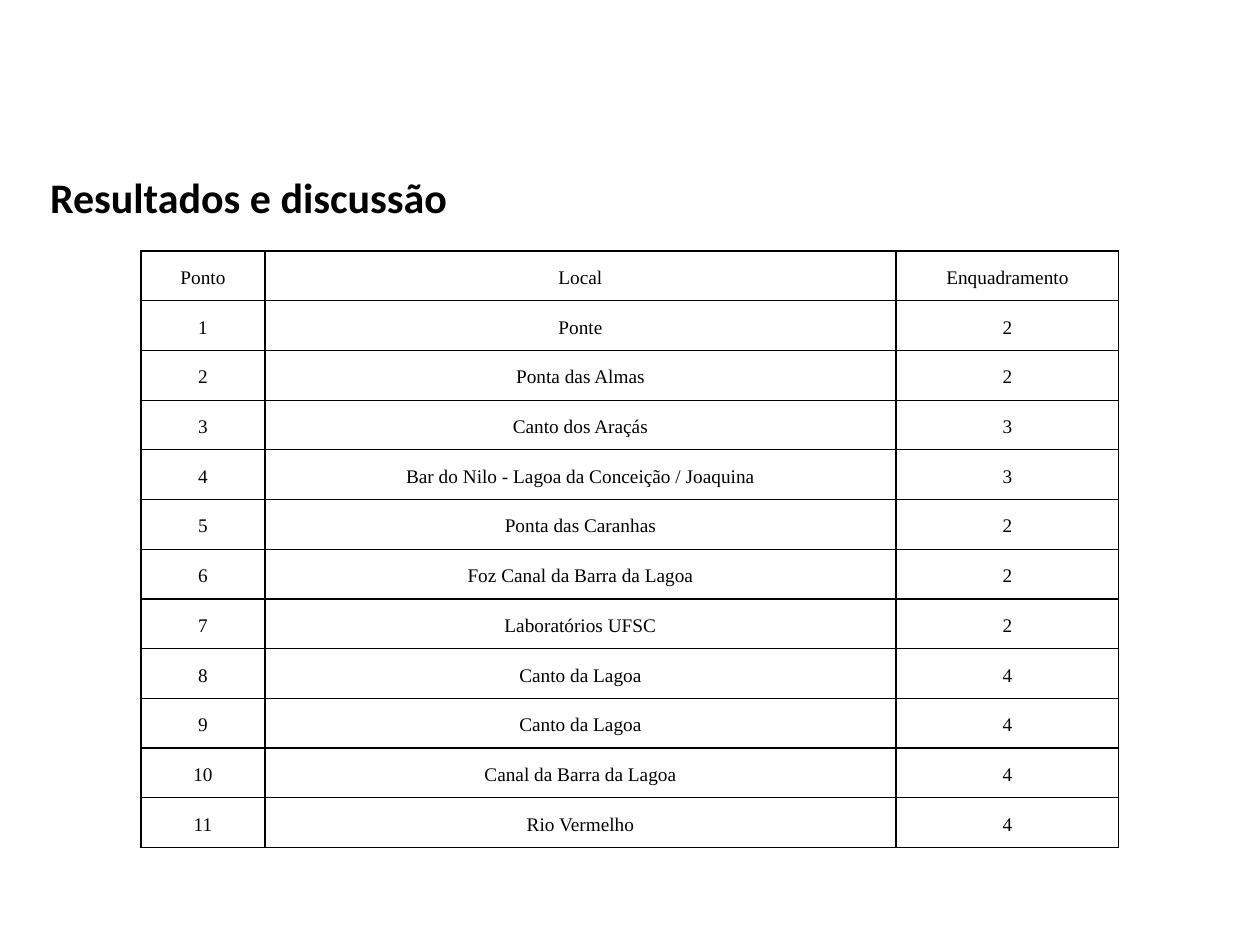
"""Build the results slide: a heading above a table of sampling points."""
from dataclasses import dataclass

from lxml import etree
from pptx import Presentation, util as u
from pptx.dml.color import RGBColor
from pptx.enum import text as t
from pptx.oxml import ns

SCALE = 914400 / 126


@dataclass(frozen=True)
class Theme:
    ink: str = "000000"
    paper: str = "FFFFFF"
    head_font: str = "Calibri"
    body_font: str = "Times New Roman"
    head_size: int = 24
    body_size: int = 11
    border: float = 0.75


@dataclass(frozen=True)
class Box:
    left: int
    top: int
    width: int
    height: int

    def emu(self) -> list[int]:
        return [px(n) for n in (self.left, self.top, self.width, self.height)]


@dataclass(frozen=True)
class Site:
    point: str
    place: str
    grade: str

    def cells(self) -> tuple[str, str, str]:
        return self.point, self.place, self.grade


THEME = Theme()
PLACES = (
    ("Ponte", 2),
    ("Ponta das Almas", 2),
    ("Canto dos Araçás", 3),
    ("Bar do Nilo - Lagoa da Conceição / Joaquina", 3),
    ("Ponta das Caranhas", 2),
    ("Foz Canal da Barra da Lagoa", 2),
    ("Laboratórios UFSC", 2),
    ("Canto da Lagoa", 4),
    ("Canto da Lagoa", 4),
    ("Canal da Barra da Lagoa", 4),
    ("Rio Vermelho", 4),
)
SITES = [Site("Ponto", "Local", "Enquadramento")] + [
    Site(str(num), place, str(grade)) for num, (place, grade) in enumerate(PLACES, 1)
]
WIDTHS = (124, 631, 223)


def px(num: int) -> int:
    return u.Emu(round(num * SCALE))


def style(para, font: str, size: int, bold: bool, gap: float) -> None:
    para.line_spacing = gap
    for run in para.runs:
        run.font.name = font
        run.font.size = u.Pt(size)
        run.font.bold = bold
        run.font.color.rgb = RGBColor.from_string(THEME.ink)


def inset(item, side: int, top: int, bottom: int) -> None:
    item.margin_left = item.margin_right = px(side)
    item.margin_top, item.margin_bottom = px(top), px(bottom)


def frame(cell) -> None:
    props = cell._tc.get_or_add_tcPr()
    for side in ("lnL", "lnR", "lnT", "lnB"):
        line = etree.SubElement(props, ns.qn(f"a:{side}"), w=str(u.Pt(THEME.border)))
        fill = etree.SubElement(line, ns.qn("a:solidFill"))
        etree.SubElement(fill, ns.qn("a:srgbClr"), val=THEME.ink)


def heading(slide, box: Box, words: str) -> None:
    area = slide.shapes.add_textbox(*box.emu()).text_frame
    area.word_wrap = True
    inset(area, 0, 0, 0)
    area.text = words
    style(area.paragraphs[0], THEME.head_font, THEME.head_size, True, 0.9)


def fill_cell(cell, words: str) -> None:
    inset(cell, 13, 13, 10)
    frame(cell)
    cell.fill.solid()
    cell.fill.fore_color.rgb = RGBColor.from_string(THEME.paper)
    cell.text_frame.text = words
    para = cell.text_frame.paragraphs[0]
    para.alignment = t.PP_ALIGN.CENTER
    style(para, THEME.body_font, THEME.body_size, False, 1.15)


def site_table(slide, box: Box, sites: list[Site]) -> None:
    table = slide.shapes.add_table(len(sites), len(WIDTHS), *box.emu()).table
    table.first_row = table.horz_banding = False
    for col, width in zip(table.columns, WIDTHS):
        col.width = px(width)
    for row, site in zip(table.rows, sites):
        for cell, words in zip(row.cells, site.cells()):
            fill_cell(cell, words)


def main() -> None:
    deck = Presentation()
    deck.slide_width, deck.slide_height = px(1260), px(945)
    slide = deck.slides.add_slide(deck.slide_layouts[6])
    heading(slide, Box(50, 177, 1193, 655), "Resultados e discussão")
    site_table(slide, Box(141, 251, sum(WIDTHS), 597), SITES)
    deck.save("out.pptx")


if __name__ == "__main__":
    main()
